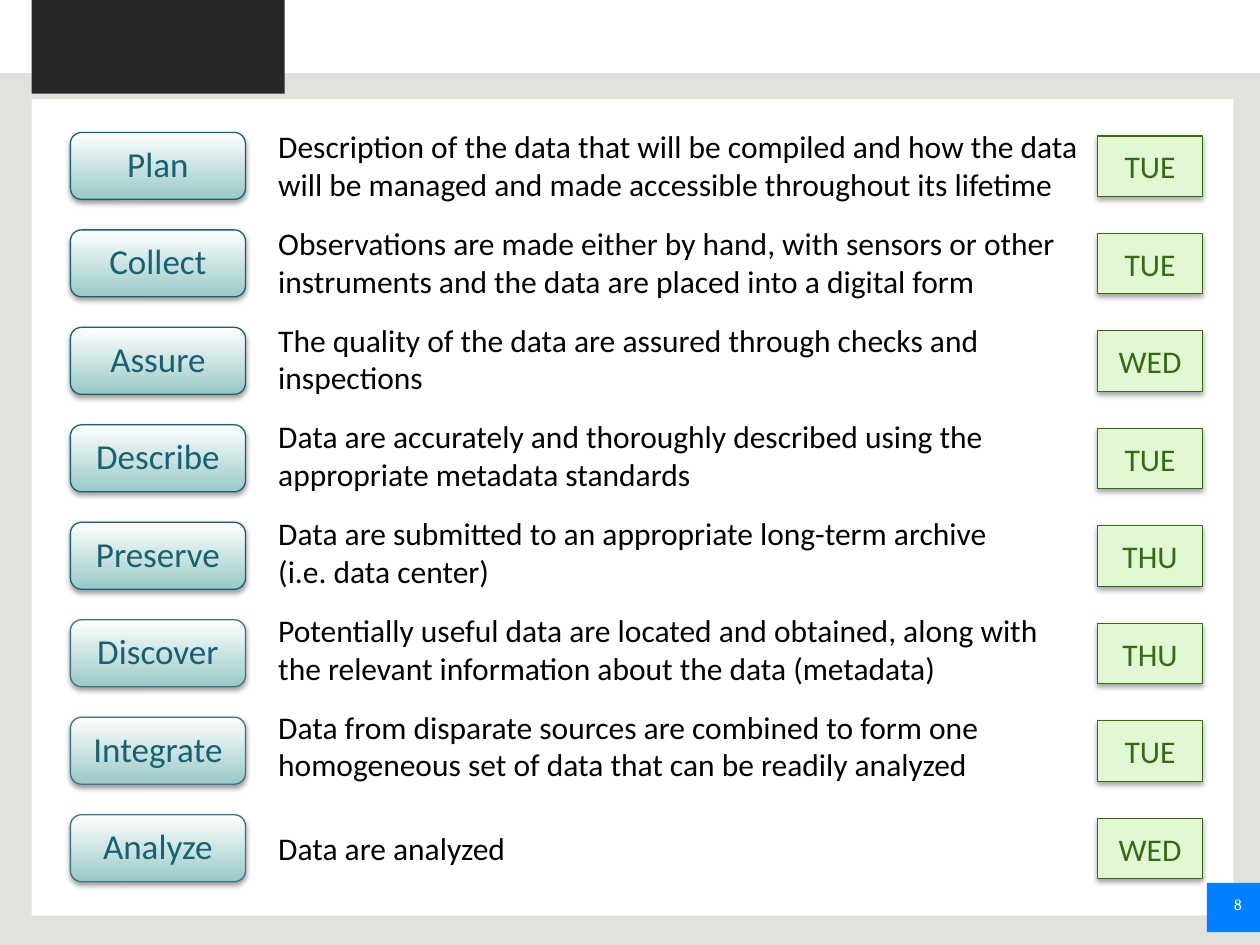
from typing import NamedTuple

from lxml import etree
from pptx import Presentation
from pptx.dml.color import RGBColor
from pptx.enum.shapes import MSO_SHAPE
from pptx.enum.text import MSO_ANCHOR, PP_ALIGN
from pptx.oxml.ns import qn
from pptx.util import Cm, Pt

RECT, PILL = MSO_SHAPE.RECTANGLE, MSO_SHAPE.ROUNDED_RECTANGLE
MIDDLE, TOP = MSO_ANCHOR.MIDDLE, MSO_ANCHOR.TOP
LEFT, CENTER, RIGHT = PP_ALIGN.LEFT, PP_ALIGN.CENTER, PP_ALIGN.RIGHT

WHITE = RGBColor(0xFF, 0xFF, 0xFF)
BLACK = RGBColor(0x00, 0x00, 0x00)
SAGE = RGBColor(0xE0, 0xE2, 0xDC)
DARK = RGBColor(0x27, 0x27, 0x27)
BLUE = RGBColor(0x00, 0x81, 0xFF)
AQUA = RGBColor(0x99, 0xC9, 0xC7)
TEAL = RGBColor(0x18, 0x60, 0x72)
SLATE = RGBColor(0x45, 0x71, 0x84)
MINT = RGBColor(0xE2, 0xF7, 0xD3)
GREEN = RGBColor(0x36, 0x6B, 0x13)


class Box(NamedTuple):
    """Left, top, width and height in centimetres."""
    x: float
    y: float
    w: float
    h: float

    def down(self, step: float):
        return self._replace(y=self.y + step)

    def frame(self) -> tuple:
        return tuple(Cm(side) for side in self)


class Style(NamedTuple):
    size: float
    color: RGBColor
    align: PP_ALIGN = LEFT
    font: str = "Calibri"


class Step(NamedTuple):
    name: str
    note: str
    day: str
    edge: RGBColor = TEAL


STEPS = [
    Step("Plan", "Description of the data that will be compiled and how the data "
         "will be managed and made accessible throughout its lifetime", "TUE"),
    Step("Collect", "Observations are made either by hand, with sensors or other "
         "instruments and the data are placed into a digital form", "TUE"),
    Step("Assure", "The quality of the data are assured through checks and "
         "inspections", "WED"),
    Step("Describe", "Data are accurately and thoroughly described using the "
         "appropriate metadata standards", "TUE"),
    Step("Preserve", "Data are submitted to an appropriate long-term archive \n"
         "(i.e. data center)", "THU"),
    Step("Discover", "Potentially useful data are located and obtained, along with "
         "the relevant information about the data (metadata)", "THU", SLATE),
    Step("Integrate", "Data from disparate sources are combined to form one "
         "homogeneous set of data that can be readily analyzed", "TUE", SLATE),
    Step("Analyze", "Data are analyzed", "WED", SLATE),
]

PANELS = [
    (Box(0, 0, 25.4, 1.47), WHITE),
    (Box(0.64, 0, 5.1, 1.89), DARK),
    (Box(0.64, 2, 24.22, 16.46), WHITE),
    (Box(24.33, 17.8, 1.07, 0.99), BLUE),
]

NAME = Box(1.42, 2.67, 3.53, 1.35)
NOTE = Box(5.36, 2.44, 16.79, 1.8)
LAST = Box(5.36, 16.59, 16.79, 1.02)
DAY = Box(22.12, 2.74, 2.13, 1.22)
PITCH, NOTE_PITCH = 1.965, 1.95


def write(shape, text: str, style: Style, anchor: MSO_ANCHOR = MIDDLE) -> None:
    frame = shape.text_frame
    frame.word_wrap = True
    frame.vertical_anchor = anchor
    para = frame.paragraphs[0]
    para.alignment = style.align
    for i, line in enumerate(text.split("\n")):
        if i:
            para.add_line_break()
        run = para.add_run()
        run.text = line
        run.font.size = Pt(style.size)
        run.font.name = style.font
        run.font.color.rgb = style.color


def draw(slide, kind: MSO_SHAPE, box: Box, fill: RGBColor, edge: RGBColor | None = None):
    shape = slide.shapes.add_shape(kind, *box.frame())
    shape.shadow.inherit = False
    shape.fill.solid()
    shape.fill.fore_color.rgb = fill
    if edge is None:
        shape.line.fill.background()
    else:
        shape.line.color.rgb = edge
        shape.line.width = Pt(0.75)
    return shape


def shade(shape, dist: float, alpha: int) -> None:
    """Drop a soft black shadow straight down."""
    effects = shape.element.spPr.find(qn("a:effectLst"))
    outer = etree.SubElement(effects, qn("a:outerShdw"), blurRad=str(Pt(3.1)),
                             dist=str(Pt(dist)), dir="5400000", rotWithShape="0")
    color = etree.SubElement(outer, qn("a:srgbClr"), val=str(BLACK))
    etree.SubElement(color, qn("a:alpha"), val=str(alpha * 1000))


def add_name(slide, box: Box, step: Step) -> None:
    pill = draw(slide, PILL, box, WHITE, step.edge)
    pill.fill.gradient()
    pill.fill.gradient_angle = 270
    for stop, color in zip(pill.fill.gradient_stops, (WHITE, AQUA)):
        stop.color.rgb = color
    shade(pill, 1.6, 38)
    frame = pill.text_frame
    frame.margin_left = frame.margin_right = Cm(0.2)
    frame.margin_top = frame.margin_bottom = Cm(0.2)
    write(pill, step.name, Style(20, TEAL, CENTER))
    frame.paragraphs[0].line_spacing = 0.9


def add_day(slide, box: Box, day: str) -> None:
    tag = draw(slide, RECT, box, MINT, GREEN)
    shade(tag, 1.8, 35)
    write(tag, day, Style(18, GREEN, CENTER))


def add_text(slide, box: Box, text: str, style: Style, anchor: MSO_ANCHOR = TOP) -> None:
    write(slide.shapes.add_textbox(*box.frame()), text, style, anchor)


def main() -> None:
    deck = Presentation()
    deck.slide_width, deck.slide_height = Cm(25.4), Cm(19.05)
    slide = deck.slides.add_slide(deck.slide_layouts[6])
    back = slide.background.fill
    back.solid()
    back.fore_color.rgb = SAGE

    for box, color in PANELS:
        draw(slide, RECT, box, color)
    add_text(slide, Box(23.83, 17.98, 1.45, 0.51), "8",
             Style(9, WHITE, RIGHT, "Cambria"), MIDDLE)

    for i, step in enumerate(STEPS):
        add_name(slide, NAME.down(i * PITCH), step)
        note = LAST if step is STEPS[-1] else NOTE.down(i * NOTE_PITCH)
        add_text(slide, note, step.note, Style(18, BLACK))
        add_day(slide, DAY.down(i * PITCH), step.day)

    deck.save("out.pptx")


if __name__ == "__main__":
    main()
